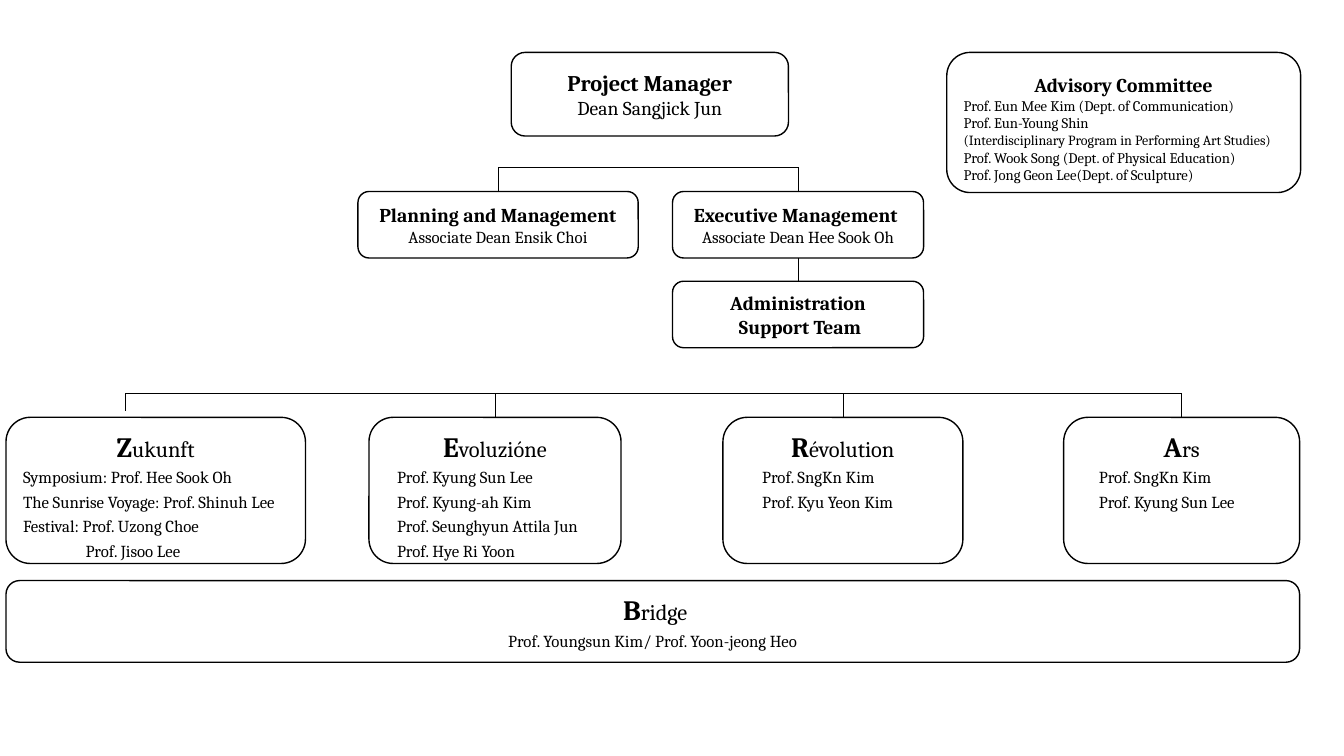
import pptx
import pptx.util
import pptx.dml.color
import pptx.enum.shapes
import pptx.enum.text
import pptx.oxml

PX = 9144
ALIGN = pptx.enum.text.PP_ALIGN
ANCHOR = pptx.enum.text.MSO_ANCHOR
THEME = {
    "ink": pptx.dml.color.RGBColor(0, 0, 0),
    "font": "Cambria",
    "box_line": 1, "link_line": 0.5,
    "initial": 20, "title": 16, "heading": 14, "body": 12, "member": 10.5, "note": 10,
    "gap": 3,
}


def set_all(target, values):
    """Set each named attribute on the target."""
    for name, value in values.items():
        setattr(target, name, value)


def add_para(tf, runs, first=False, indent=0, **fmt):
    """Add a paragraph of (text, theme size, bold) runs."""
    p = tf.paragraphs[0] if first else tf.add_paragraph()
    set_all(p, {"alignment": ALIGN.LEFT, **fmt})
    if indent:
        p._p.get_or_add_pPr().set("marL", str(indent * PX))
    for text, size, bold in runs:
        r = p.add_run()
        r.text = text
        set_all(r.font, {"name": THEME["font"], "size": pptx.util.Pt(THEME[size]), "bold": bold})
        r.font.color.rgb = THEME["ink"]


def add_box(slide, box, anchor=ANCHOR.MIDDLE):
    """Draw an empty outlined rounded box."""
    s = slide.shapes.add_shape(pptx.enum.shapes.MSO_SHAPE.ROUNDED_RECTANGLE, *(v * PX for v in box))
    s.shadow.inherit = False
    s.fill.background()
    s.line.color.rgb = THEME["ink"]
    s.line.width = pptx.util.Pt(THEME["box_line"])
    set_all(s.text_frame, {"word_wrap": True, "vertical_anchor": anchor})
    return s


def add_link(slide, x1, y1, x2, y2, start=None, end=None):
    """Draw a thin line, joined to the bottom of start and the top of end."""
    c = slide.shapes.add_connector(pptx.enum.shapes.MSO_CONNECTOR.STRAIGHT, x1, y1, x2, y2)
    c.line.color.rgb = THEME["ink"]
    c.line.width = pptx.util.Pt(THEME["link_line"])
    c._element.spPr.append(pptx.oxml.parse_xml(
        '<a:effectLst xmlns:a="http://schemas.openxmlformats.org/drawingml/2006/main"/>'))
    if start is not None:
        c.begin_connect(start, 2)
    if end is not None:
        c.end_connect(end, 0)


def middle(s):
    """Return the horizontal centre of a shape."""
    return s.left + s.width // 2


def add_role(slide, box, *lines):
    """Draw a centred role box from (text, size, bold) lines."""
    s = add_box(slide, box)
    for i, line in enumerate(lines):
        add_para(s.text_frame, [line], i == 0, alignment=ALIGN.CENTER)
    return s


def add_committee(slide, box, title, members):
    """Draw the committee box with its members listed on the left."""
    tf = add_box(slide, box).text_frame
    add_para(tf, [(title, "heading", True)], True, alignment=ALIGN.CENTER, line_spacing=1.5)
    for text, size in members:
        add_para(tf, [(text, size, False)])


def add_team(slide, box, name, members, indent=0):
    """Draw a team box with a large initial and (text, extra indent) members."""
    s = add_box(slide, box, ANCHOR.TOP)
    gap = pptx.util.Pt(THEME["gap"])
    add_para(s.text_frame, [(name[0], "initial", True), (name[1:], "title", False)], True,
             alignment=ALIGN.CENTER, space_before=gap)
    for text, extra in members:
        add_para(s.text_frame, [(text, "body", False)], indent=indent + extra, space_before=gap)
    return s


def add_bridge(slide, box, name, members):
    """Draw the wide box that spans all teams."""
    tf = add_box(slide, box).text_frame
    fmt = {"alignment": ALIGN.CENTER, "space_before": pptx.util.Pt(THEME["gap"])}
    add_para(tf, [(" ", "title", False), (name[0], "initial", True), (name[1:], "title", False)],
             True, **fmt)
    add_para(tf, [(members, "body", False)], **fmt)


def add_branch(slide, y, drops):
    """Draw a bar at y with a drop to each (x, bottom, joined shape)."""
    add_link(slide, drops[0][0], y, drops[-1][0], y)
    for x, bottom, s in drops:
        add_link(slide, x, y, x, bottom, end=s)


def add_management(slide, left, top):
    """Draw the manager, the two deans and the support team."""
    add_role(slide, (left + 152, top, 275, 83),
             ("Project Manager", "title", True), ("Dean Sangjick Jun", "heading", False))
    planning = add_role(slide, (left, top + 138, 278, 66),
                        ("Planning and Management", "heading", True),
                        ("Associate Dean Ensik Choi", "body", False))
    executive = add_role(slide, (left + 312, top + 138, 249, 66),
                         ("Executive Management ", "heading", True),
                         ("Associate Dean Hee Sook Oh", "body", False))
    support = add_role(slide, (left + 312, top + 227, 249, 66),
                       ("Administration", "heading", True), (" Support Team", "heading", True))
    add_branch(slide, (top + 114) * PX, [(middle(s), s.top, s) for s in (planning, executive)])
    add_link(slide, middle(executive), executive.top + executive.height,
             middle(support), support.top, executive, support)


def add_teams(slide, top, height):
    """Draw the row of teams under their shared bar."""
    teams = [
        (6, 297, "Zukunft", 0, [("Symposium: Prof. Hee Sook Oh", 0),
                                ("The Sunrise Voyage: Prof. Shinuh Lee", 0),
                                ("Festival: Prof. Uzong Choe", 0), ("Prof. Jisoo Lee", 62)]),
        (366, 250, "Evoluzióne", 11, [("Prof. Kyung Sun Lee", 0), ("Prof. Kyung-ah Kim", 0),
                                      ("Prof. Seunghyun Attila Jun", 0), ("Prof. Hye Ri Yoon", 0)]),
        (717, 238, "Révolution", 22, [("Prof. SngKn Kim", 0), ("Prof. Kyu Yeon Kim", 0)]),
        (1055, 234, "Ars", 18, [("Prof. SngKn Kim", 0), ("Prof. Kyung Sun Lee", 0)]),
    ]
    shapes = [add_team(slide, (left, top, width, height), name, members, indent)
              for left, width, name, indent, members in teams]
    drops = [(124 * PX, (top - 6) * PX, None)]
    drops += [(middle(s), s.top, s) for s in shapes[1:]]
    add_branch(slide, (top - 24) * PX, drops)


def main():
    """Build and save the organisation chart."""
    prs = pptx.Presentation()
    prs.slide_width, prs.slide_height = 1333 * PX, 750 * PX
    slide = prs.slides.add_slide(prs.slide_layouts[6])
    add_management(slide, 355, 52)
    add_committee(slide, (939, 52, 351, 139), "Advisory Committee", [
        ("Prof. Eun Mee Kim (Dept. of Communication)", "member"),
        ("Prof. Eun-Young Shin", "member"),
        ("(Interdisciplinary Program in Performing Art Studies)", "note"),
        ("Prof. Wook Song (Dept. of Physical Education)", "member"),
        ("Prof. Jong Geon Lee(Dept. of Sculpture)", "member"),
    ])
    add_teams(slide, 414, 145)
    add_bridge(slide, (6, 576, 1283, 81), "Bridge", "Prof. Youngsun Kim/ Prof. Yoon-jeong Heo")
    prs.save("out.pptx")


if __name__ == "__main__":
    main()
